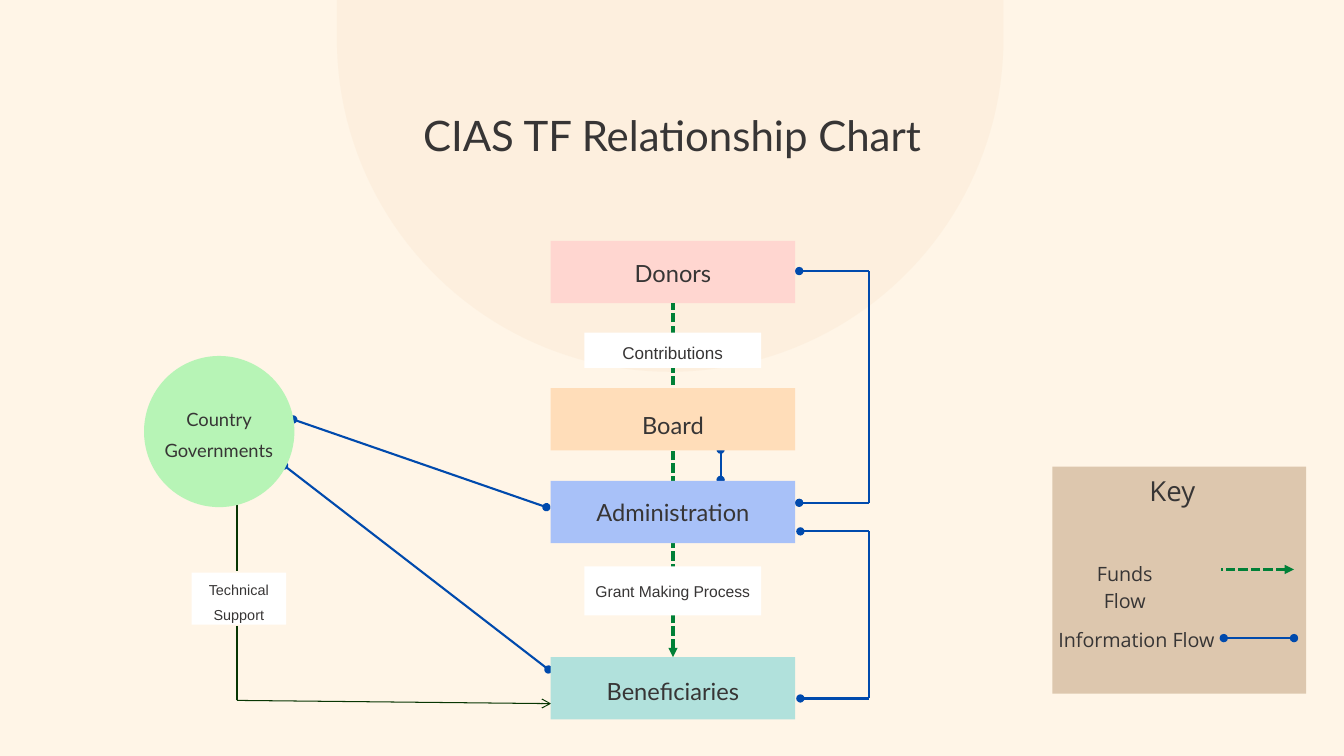
import math

from lxml import etree
from pptx import Presentation
from pptx import util as u
from pptx.dml.color import RGBColor
from pptx.enum import dml, shapes, text
from pptx.oxml.ns import qn

COLORS = {
    "page": "FFF5E7", "arch": "FDEEDB", "ink": "373535", "white": "FFFFFF",
    "donors": "FFD6D0", "board": "FFDDB9", "admin": "A8C1F8",
    "beneficiaries": "B1E1DC", "country": "B7F4B6", "key": "DDC7AE",
    "info": "004AAD", "funds": "008037", "support": "083603",
}


def rgb(name):
    return RGBColor.from_string(COLORS[name])


def write(sp, words, font="Lato", size=16.9, spacing=29.2, top=0):
    tf = sp.text_frame
    tf.word_wrap = True
    tf.auto_size = text.MSO_AUTO_SIZE.NONE
    tf.vertical_anchor = text.MSO_ANCHOR.TOP
    tf.margin_left = tf.margin_right = tf.margin_bottom = 0
    tf.margin_top = u.Cm(top)
    p = tf.paragraphs[0]
    p.alignment = text.PP_ALIGN.CENTER
    p.line_spacing = u.Pt(spacing)
    p.space_before = u.Pt(0)
    r = p.add_run()
    r.text = words
    r.font.name = font
    r.font.size = u.Pt(size)
    r.font.bold = False
    r.font.color.rgb = rgb("ink")


class Chart:
    def __init__(self, prs):
        self.s = prs.slides.add_slide(prs.slide_layouts[5])
        fill = self.s.background.fill
        fill.solid()
        fill.fore_color.rgb = rgb("page")

    def title(self, words, x, y, w, h, **fmt):
        sp = self.s.shapes.title
        sp.left, sp.top, sp.width, sp.height = map(u.Cm, (x, y, w, h))
        write(sp, words, **fmt)

    def paint(self, sp, color):
        sp.shadow.inherit = False
        sp.line.fill.background()
        sp.fill.solid()
        sp.fill.fore_color.rgb = rgb(color)
        return sp

    def box(self, x, y, w, h, color, words=None, kind="RECTANGLE", **fmt):
        sp = self.s.shapes.add_shape(
            shapes.MSO_SHAPE[kind], *map(u.Cm, (x, y, w, h)))
        self.paint(sp, color)
        if words:
            write(sp, words, **fmt)
        return sp

    def label(self, x, y, w, h, words, **fmt):
        write(self.s.shapes.add_textbox(*map(u.Cm, (x, y, w, h))), words, **fmt)

    def arch(self, cx, cy, radius, color, alpha):
        arc = [(cx + radius * math.cos(math.radians(a)),
                cy + radius * math.sin(math.radians(a))) for a in range(0, 181, 2)]
        points = [(u.Cm(x), u.Cm(y)) for x, y in arc + [(cx - radius, 0)]]
        fb = self.s.shapes.build_freeform(u.Cm(cx + radius), 0)
        fb.add_line_segments(points, close=True)
        sp = self.paint(fb.convert_to_shape(), color)
        clr = sp._element.spPr.find(".//" + qn("a:srgbClr"))
        etree.SubElement(clr, qn("a:alpha"), val=str(alpha * 1000))
        self.s.shapes._spTree.insert(2, sp._element)

    def line(self, x1, y1, x2, y2, color="info", width=1.5,
             head=None, tail=None, dashed=False):
        c = self.s.shapes.add_connector(
            shapes.MSO_CONNECTOR.STRAIGHT, *map(u.Cm, (x1, y1, x2, y2)))
        c.line.color.rgb = rgb(color)
        c.line.width = u.Pt(width)
        if dashed:
            c.line.dash_style = dml.MSO_LINE.SQUARE_DOT
        ln = c.line._get_or_add_ln()
        for tag, end in (("a:headEnd", head), ("a:tailEnd", tail)):
            if end:
                etree.SubElement(ln, qn(tag), type=end)
        etree.SubElement(c._element.spPr, qn("a:effectLst"))
        return c

    def bracket(self, x, top, bottom, right):
        for y in (top, bottom):
            self.line(x, y, right, y, head="oval")
        self.line(right, top, right, bottom)


def main():
    prs = Presentation()
    prs.slide_width, prs.slide_height = u.Cm(33.87), u.Cm(19.05)
    chart = Chart(prs)
    chart.arch(16.89, 0.97, 8.4, "arch", 72)
    chart.title("CIAS TF Relationship Chart", 8.61, 2.21, 16.66, 1.68,
                size=30, spacing=51.9)

    for ends in ((7.16, 11.73, 13.82, 16.87), (7.39, 10.57, 13.77, 12.78),
                 (18.16, 11.33, 18.16, 12.09)):
        chart.line(*ends, head="oval", tail="oval")
    chart.bracket(20.14, 6.83, 12.67, 21.89)
    chart.bracket(20.17, 13.39, 17.6, 21.89)

    for top, bottom in ((12.57, 14.38), (15.77, 17.65)):
        chart.line(5.97, top, 5.97, bottom, color="support", width=1)
    chart.line(5.97, 17.65, 13.89, 17.73, color="support", width=0.75, tail="arrow")

    def party(y, color, words, top):
        return chart.box(13.88, y, 6.16, 1.57, color, words, top=top)

    donors = party(6.07, "donors", "Donors", 0.15)
    beneficiaries = party(16.56, "beneficiaries", "Beneficiaries", 0.18)
    funds = chart.line(16.96, 16.56, 16.96, 7.64, color="funds", width=2.25,
                       head="triangle", dashed=True)
    funds.begin_connect(beneficiaries, 0)
    funds.end_connect(donors, 2)
    party(9.78, "board", "Board", 0.25)
    party(12.12, "admin", "Administration", 0.1)

    for x, y, w, h, words, size, spacing, top in (
            (14.73, 8.38, 4.45, 0.89, "Contributions", 12.2, 21.1, 0.03),
            (14.73, 14.27, 4.45, 1.24, "Grant Making Process", 11.2, 19.5, 0.18),
            (4.83, 14.43, 2.38, 1.31, "Technical Support", 10.3, 17.8, 0.03)):
        chart.box(x, y, w, h, "white", words, font="Arial",
                  size=size, spacing=spacing, top=top)

    chart.box(3.63, 8.97, 3.79, 3.81, "country", kind="OVAL")
    chart.label(3.89, 10.03, 3.25, 1.55, "Country Governments", size=13.1, spacing=22.7)

    chart.box(26.52, 11.76, 6.4, 5.72, "key")
    for x, y, w, h, words, size, spacing in (
            (28.73, 11.81, 1.63, 0.94, "Key", 19.7, 27.6),
            (27.1, 14.05, 2.49, 1.4, "Funds Flow", 14.1, 19.7),
            (25.96, 15.72, 5.36, 0.66, "Information Flow", 14.1, 19.7)):
        chart.label(x, y, w, h, words, font="Open Sans", size=size, spacing=spacing)
    chart.line(32.61, 14.35, 30.76, 14.35, color="funds", width=2.25,
               head="triangle", dashed=True)
    chart.line(30.84, 16.08, 32.61, 16.08, head="oval", tail="oval")

    prs.save("out.pptx")


if __name__ == "__main__":
    main()
